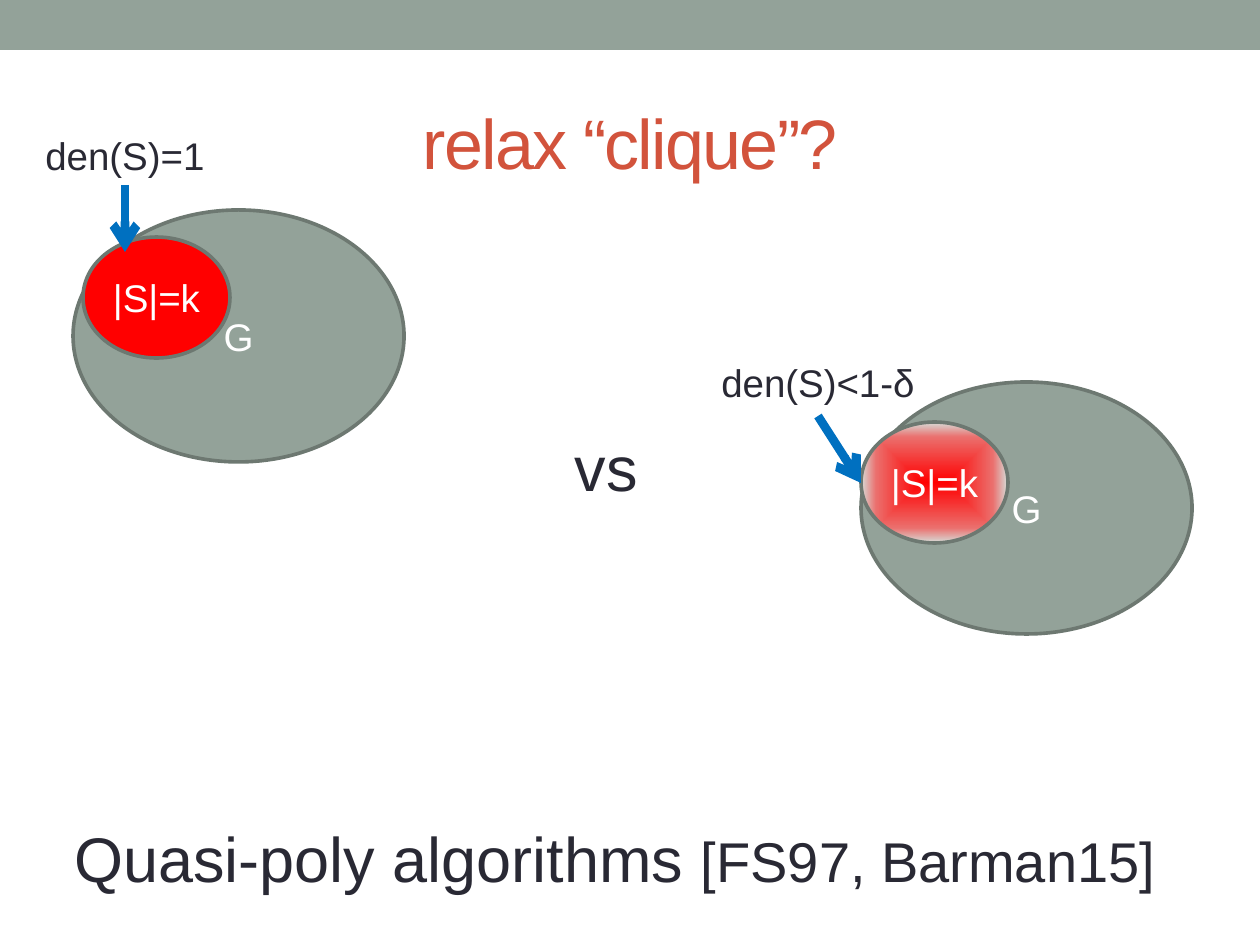
import pptx
import pptx.util
import pptx.dml.color
import pptx.enum.shapes
import pptx.enum.text
import pptx.oxml
import pptx.oxml.ns

PX = 914400 / 126
FONT = "Arial"
SAGE, OUTLINE, INK, WHITE = "93A299", "6D7871", "292934", "FFFFFF"
RED, TITLE_RED, BLUE = "FF0000", "D2533C", "0070C0"
GRAPH_SIZE = (331, 252)
SUBSET_SIZE = (147, 121)

TITLE = "relax “clique”?"
# box, runs as (text, size)
CAPTIONS = [
    ((57, 813, 1116, 89), [("Quasi-poly algorithms ", 36), ("[FS97, Barman15]", 32)]),
    ((562, 422, 89, 89), [("vs", 36)]),
]
FADE = [(0, RED), (75, "EB6F6D"), (100, "D6DDD9"), (100, "EBEEEC")]
GRAPHS = [
    dict(graph=(73, 210), subset=(83, 237), fade=None, label="den(S)=1",
         label_box=(32, 126, 186, 59), arrow=(125, 185, 125, 252)),
    dict(graph=(861, 382), subset=(861, 422), fade=FADE, label="den(S)<1-δ",
         label_box=(707, 353, 222, 59), arrow=(818, 416, 861, 483)),
]


def px(*values):
    return [round(value * PX) for value in values]


def rgb(code):
    return pptx.dml.color.RGBColor.from_string(code)


def element(tag, attributes=""):
    """Make an empty drawing element, such as a:effectLst."""
    return pptx.oxml.parse_xml(f"<{tag} {attributes} {pptx.oxml.ns.nsdecls('a')}/>")


def write(frame, runs, color, wrap=False):
    frame.word_wrap = wrap
    para = frame.paragraphs[0]
    para.alignment = pptx.enum.text.PP_ALIGN.CENTER
    para.font.name = FONT
    para.font.color.rgb = rgb(color)
    para.font.size = pptx.util.Pt(runs[0][1])
    for text, size in runs:
        span = para.add_run()
        span.text = text
        if size != runs[0][1]:
            span.font.size = pptx.util.Pt(size)
    return para


def add_text(page, box, runs):
    label = page.shapes.add_textbox(*px(*box))
    write(label.text_frame, runs, INK)
    label.text_frame.auto_size = pptx.enum.text.MSO_AUTO_SIZE.SHAPE_TO_FIT_TEXT
    return label


def add_solid(page, kind, box, fill):
    shape = page.shapes.add_shape(kind, *px(*box))
    shape.shadow.inherit = False
    shape.fill.solid()
    shape.fill.fore_color.rgb = rgb(fill)
    return shape


def add_ellipse(page, box, fill, text, wrap):
    oval = add_solid(page, pptx.enum.shapes.MSO_SHAPE.OVAL, box, fill)
    oval.line.color.rgb = rgb(OUTLINE)
    oval.line.width = pptx.util.Pt(2.08)
    oval.text_frame.vertical_anchor = pptx.enum.text.MSO_ANCHOR.MIDDLE
    write(oval.text_frame, [(text, 22)], WHITE, wrap)
    return oval


def fade_from_center(shape, stops):
    stop_xml = "".join(
        f'<a:gs pos="{place * 1000}"><a:srgbClr val="{color}"/></a:gs>'
        for place, color in stops)
    gradient = pptx.oxml.parse_xml(
        f"<a:gradFill {pptx.oxml.ns.nsdecls('a')}><a:gsLst>{stop_xml}</a:gsLst>"
        '<a:path path="rect">'
        '<a:fillToRect l="50000" t="50000" r="50000" b="50000"/></a:path></a:gradFill>')
    properties = shape._element.spPr
    properties.replace(properties.find(pptx.oxml.ns.qn("a:solidFill")), gradient)


def add_arrow(page, ends, label, label_box):
    arrow = page.shapes.add_connector(
        pptx.enum.shapes.MSO_CONNECTOR.STRAIGHT, *px(*ends))
    left, top, width, height = label_box
    if ends[:2] == (left + width // 2, top + height):
        arrow.begin_connect(label, 2)
    arrow.line.color.rgb = rgb(BLUE)
    arrow.line.width = pptx.util.Pt(5)
    arrow.line._get_or_add_ln().append(element("a:tailEnd", 'type="arrow"'))
    arrow._element.spPr.append(element("a:effectLst"))


def main():
    deck = pptx.Presentation()
    deck.slide_width, deck.slide_height = px(1260, 945)
    page = deck.slides.add_slide(deck.slide_layouts[5])

    band = add_solid(page, pptx.enum.shapes.MSO_SHAPE.RECTANGLE, (0, 0, 1260, 50), SAGE)
    band.line.fill.background()

    title = page.shapes.title
    title.left, title.top, title.width, title.height = px(63, 73, 1134, 136)
    title.text_frame.vertical_anchor = pptx.enum.text.MSO_ANCHOR.MIDDLE
    para = write(title.text_frame, [(TITLE, 40)], TITLE_RED, wrap=True)
    para.runs[0].font._element.set("spc", "-100")

    for box, runs in CAPTIONS:
        add_text(page, box, runs)

    for item in GRAPHS:
        add_ellipse(page, item["graph"] + GRAPH_SIZE, SAGE, "G", True)
        subset = add_ellipse(page, item["subset"] + SUBSET_SIZE, RED, "|S|=k", False)
        if item["fade"]:
            fade_from_center(subset, item["fade"])
        label = add_text(page, item["label_box"], [(item["label"], 22)])
        add_arrow(page, item["arrow"], label, item["label_box"])

    deck.save("out.pptx")


if __name__ == "__main__":
    main()
